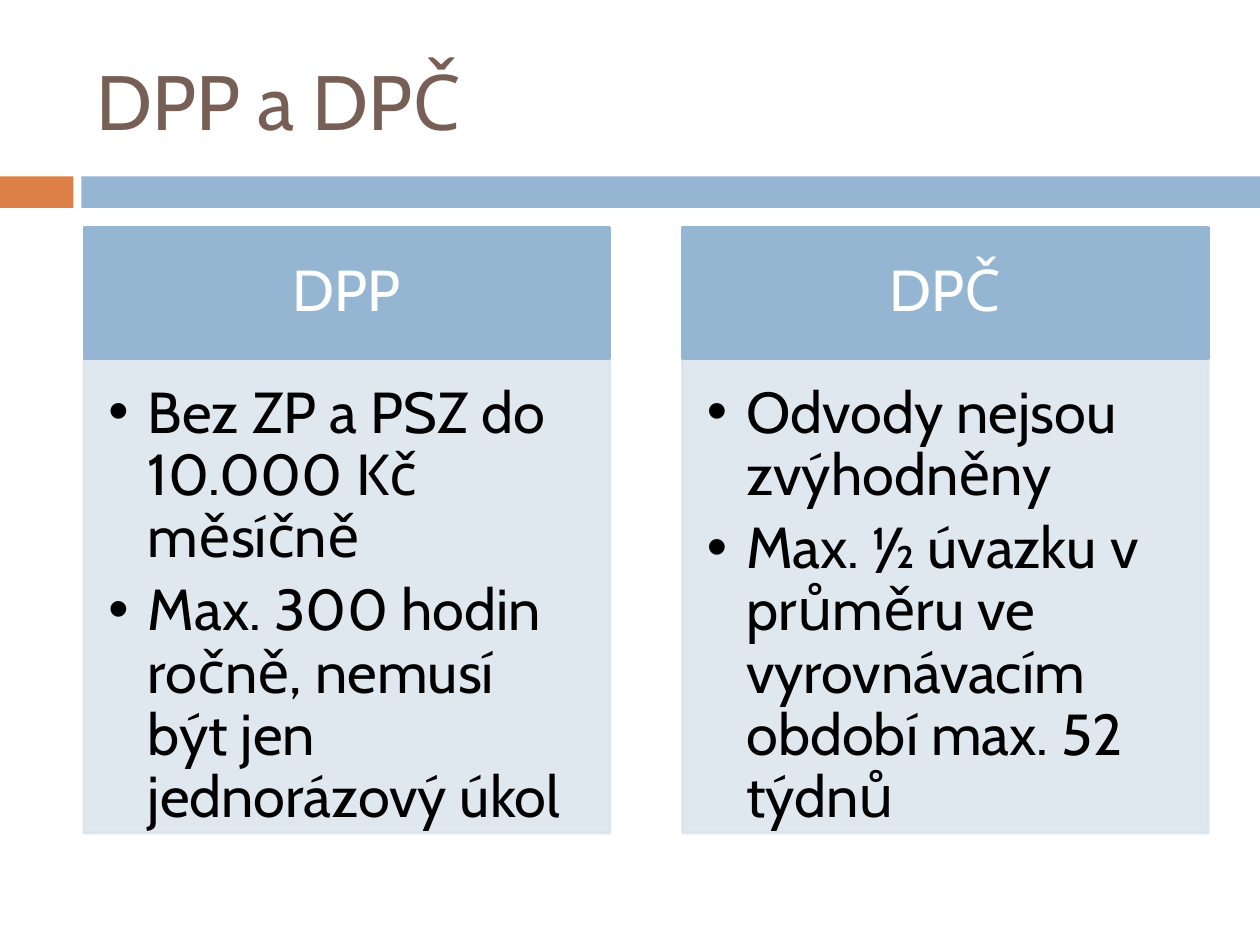
from lxml import etree
from pptx import Presentation
from pptx.dml.color import RGBColor
from pptx.enum import shapes, text
from pptx.oxml.ns import qn
from pptx.util import Pt

COLORS = {
    "orange": "DD8047",
    "blue": "94B6D2",
    "pale": "DCE5EE",
    "brown": "775F55",
    "white": "FFFFFF",
    "black": "000000",
}
FONT = "Cabin"


def paint(sp, color, line=None, opacity=100):
    """Fill a shape and outline it in the same colour, or leave it without a line."""
    formats = [sp.fill]
    if line:
        sp.line.width = Pt(line)
        formats.append(sp.line.fill)
    else:
        sp.line.fill.background()
    for fill in formats:
        fill.solid()
        fill.fore_color.rgb = RGBColor.from_string(COLORS[color])
    if opacity < 100:
        for clr in sp._element.spPr.iter(qn("a:srgbClr")):
            etree.SubElement(clr, qn("a:alpha"), val=str(opacity * 1000))


def write(sp, lines, size, color, align=text.PP_ALIGN.LEFT, anchor=text.MSO_ANCHOR.MIDDLE,
          margins=(7.2, 3.6, 7.2, 3.6), spacing=1.0, after=0, indent=0):
    tf = sp.text_frame
    tf.word_wrap = True
    tf.auto_size = text.MSO_AUTO_SIZE.NONE
    tf.vertical_anchor = anchor
    tf.margin_left, tf.margin_top, tf.margin_right, tf.margin_bottom = map(Pt, margins)
    for i, line in enumerate(lines):
        p = tf.paragraphs[0] if i == 0 else tf.add_paragraph()
        p.alignment = align
        p.line_spacing = spacing
        p.space_before, p.space_after = Pt(0), Pt(after)
        if indent:
            pPr = p._p.get_or_add_pPr()
            pPr.set("marL", str(Pt(indent)))
            pPr.set("indent", str(-Pt(indent)))
            etree.SubElement(pPr, qn("a:buFont"), typeface="Arial")
            etree.SubElement(pPr, qn("a:buChar"), char="•")
        r = p.add_run()
        r.text = line
        r.font.name = FONT
        r.font.size = Pt(size)
        r.font.color.rgb = RGBColor.from_string(COLORS[color])


prs = Presentation()
prs.slide_width, prs.slide_height = Pt(720), Pt(540)
s = prs.slides.add_slide(prs.slide_layouts[3])  # title and two lists
title, *lists = s.placeholders

# Title and the band below it
title.left, title.top, title.width, title.height = Pt(48), Pt(18), Pt(642), Pt(78)
write(title, ["DPP a DPČ"], 44, "brown")

for left, width, color in [(0, 42, "orange"), (46.5, 673.5, "blue")]:
    sp = s.shapes.add_shape(shapes.MSO_SHAPE.RECTANGLE, Pt(left), Pt(100.8), Pt(width), Pt(18))
    sp.shadow.inherit = False
    paint(sp, color)

# Two columns, each a heading over a list
COL_LEFT, COL_WIDTH, COL_STEP = 48, 300.5, 342
HEAD_TOP, HEAD_HEIGHT, LIST_HEIGHT = 130, 75, 271
columns = [
    ("DPP", ["Bez ZP a PSZ do 10.000 Kč měsíčně",
             "Max. 300 hodin ročně, nemusí být jen jednorázový úkol"]),
    ("DPČ", ["Odvody nejsou zvýhodněny",
             "Max. ½ úvazku v průměru ve vyrovnávacím období max. 52 týdnů"]),
]
for i, (heading, items) in enumerate(columns):
    left = Pt(COL_LEFT + i * COL_STEP)
    head = s.shapes.add_shape(shapes.MSO_SHAPE.RECTANGLE, left, Pt(HEAD_TOP),
                              Pt(COL_WIDTH), Pt(HEAD_HEIGHT))
    head.shadow.inherit = False
    paint(head, "blue", line=1.5)
    write(head, [heading], 33, "white", align=text.PP_ALIGN.CENTER,
          margins=(18.5, 10.5, 18.5, 10.5), spacing=0.9)

    body = lists[i]
    body.left, body.top = left, Pt(HEAD_TOP + HEAD_HEIGHT)
    body.width, body.height = Pt(COL_WIDTH), Pt(LIST_HEIGHT)
    paint(body, "pale", line=1.5, opacity=90)
    write(body, items, 33, "black", anchor=text.MSO_ANCHOR.TOP,
          margins=(14, 14, 18.5, 21), spacing=0.9, after=6, indent=22.5)

# The layout's date, footer and number placeholders are not carried onto the slide
prs.save("out.pptx")
